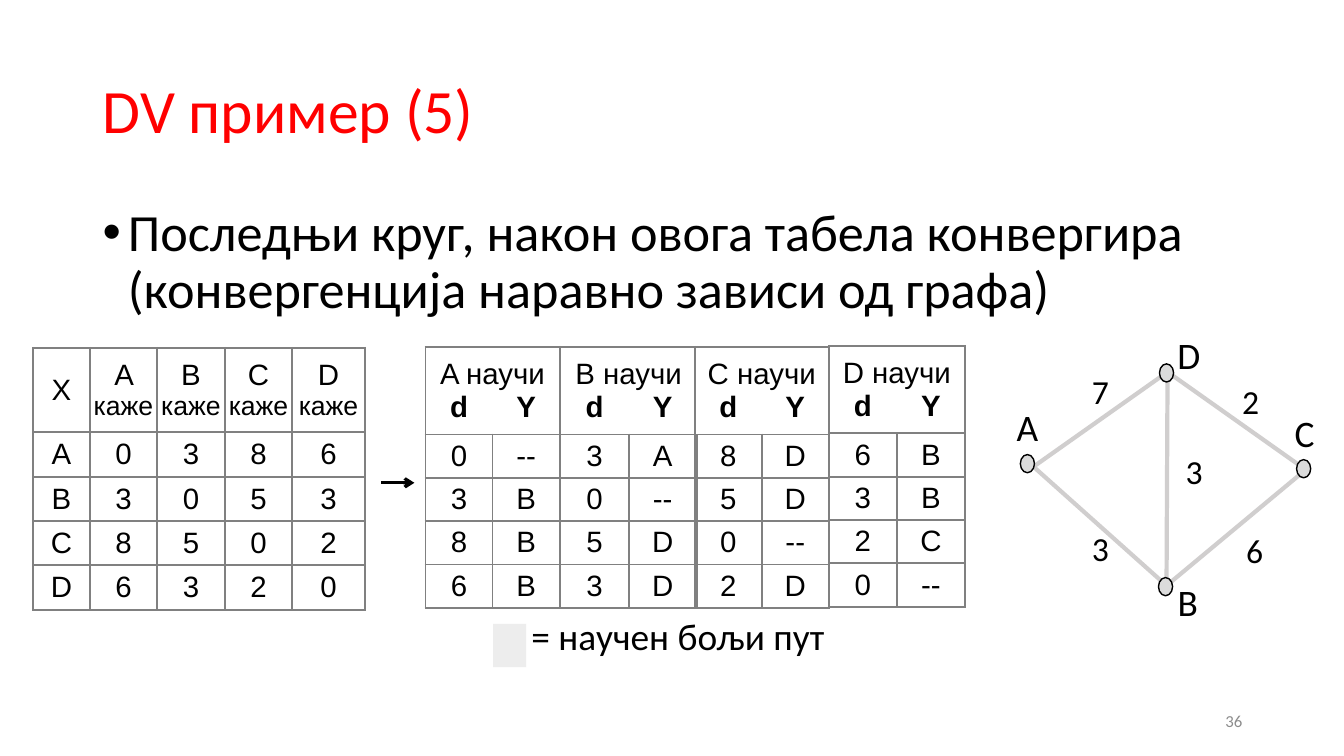
import lxml.etree
import pptx
import pptx.dml.color
import pptx.enum.shapes
import pptx.enum.text
import pptx.oxml.ns
import pptx.util

Inches = pptx.util.Inches
Pt = pptx.util.Pt
qn = pptx.oxml.ns.qn
ALIGN = pptx.enum.text.PP_ALIGN
ANCHOR = pptx.enum.text.MSO_ANCHOR
SHAPE = pptx.enum.shapes.MSO_SHAPE


def color(value):
    return pptx.dml.color.RGBColor.from_string(value)


def add_xml(parent, tag, **attributes):
    return lxml.etree.SubElement(parent, qn(tag), attributes)


class SlideBuilder:
    """Holds the slide and its style, and adds each kind of element."""

    body_font, table_font = "Calibri", "Arial"
    black, white, red, gray = "000000", "FFFFFF", "FF0000", "808080"

    def __init__(self, slide):
        self.slide = slide

    def style(self, font, size, name=None, hue=None, bold=False):
        font.name = name or self.body_font
        font.size = Pt(size)
        font.bold = bold
        font.color.rgb = color(hue or self.black)

    def title(self, text, *box):
        shape = self.slide.shapes.title
        shape.left, shape.top, shape.width, shape.height = map(Inches, box)
        frame = shape.text_frame
        frame.text = text
        frame.vertical_anchor = ANCHOR.MIDDLE
        paragraph = frame.paragraphs[0]
        paragraph.alignment = ALIGN.LEFT
        paragraph.line_spacing = 0.9
        self.style(paragraph.font, 44, hue=self.red)

    def text(self, text, box, size, hue=None, align=ALIGN.LEFT, anchor=ANCHOR.TOP,
             wrap=True, insets=(0.1, 0.05), spacing=None, bullet=False):
        frame = self.slide.shapes.add_textbox(*map(Inches, box)).text_frame
        frame.word_wrap = wrap
        frame.vertical_anchor = anchor
        frame.margin_left, frame.margin_top = map(Inches, insets)
        frame.margin_bottom = frame.margin_top
        frame.text = text
        paragraph = frame.paragraphs[0]
        paragraph.alignment = align
        if bullet:
            properties = paragraph._p.get_or_add_pPr()
            properties.set("marL", str(Inches(0.25)))
            properties.set("indent", str(-Inches(0.25)))
            add_xml(properties, "a:buFont", typeface="Arial")
            add_xml(properties, "a:buChar", char="•")
            paragraph.space_before = Pt(10)
        if spacing:
            paragraph.line_spacing = spacing
        self.style(paragraph.font, size, hue=hue)

    def shape(self, kind, box, fill, line=None):
        shape = self.slide.shapes.add_shape(kind, *map(Inches, box))
        shape.shadow.inherit = False
        shape.fill.solid()
        shape.fill.fore_color.rgb = color(fill)
        if line:
            shape.line.color.rgb = color(line)
            shape.line.width = Pt(1)
        else:
            shape.line.fill.background()

    def line(self, start, end, hue, width, arrow=False):
        connector = self.slide.shapes.add_connector(
            pptx.enum.shapes.MSO_CONNECTOR.STRAIGHT, *map(Inches, start + end))
        connector.line.color.rgb = color(hue)
        connector.line.width = Pt(width)
        if arrow:
            add_xml(connector.line._get_or_add_ln(), "a:tailEnd", type="arrow")
        add_xml(connector._element.spPr, "a:effectLst")

    def table(self, left, top, columns, rows):
        table = self.slide.shapes.add_table(
            len(rows), len(columns), Inches(left), Inches(top),
            Inches(sum(columns)), Inches(sum(rows))).table
        table.first_row = table.horz_banding = False
        for column, width in zip(table.columns, columns):
            column.width = Inches(width)
        for row, height in zip(table.rows, rows):
            row.height = Inches(height)
        return table

    def cell(self, cell, text="", filled=True):
        cell.vertical_anchor = ANCHOR.MIDDLE
        cell.margin_left = cell.margin_right = 0
        cell.margin_top = cell.margin_bottom = Inches(0.01)
        properties = cell._tc.get_or_add_tcPr()
        for side in "LRTB":
            border = add_xml(properties, f"a:ln{side}", w=str(Pt(1.5)))
            add_xml(add_xml(border, "a:solidFill"), "a:srgbClr", val=self.gray)
        if filled:
            cell.fill.solid()
            cell.fill.fore_color.rgb = color(self.white)
        else:
            cell.fill.background()
        cell.text = text
        paragraph = cell.text_frame.paragraphs[0]
        paragraph.alignment = ALIGN.CENTER
        self.style(paragraph.font, 21, self.table_font)

    def announced_table(self, nodes, distances):
        table = self.table(0.33, 3.45, [0.56, 0.67, 0.67, 0.67, 0.72], [0.84] + [0.44] * 4)
        self.cell(table.cell(0, 0), "X")
        for index, node in enumerate(nodes, 1):
            header = table.cell(0, index)
            self.cell(header)
            paragraph = header.text_frame.paragraphs[0]
            for text, size in ((node + " ", 21), ("каже", 19)):
                run = paragraph.add_run()
                run.text = text
                self.style(run.font, size, self.table_font)
            for column, text in enumerate(node + distances[index - 1]):
                self.cell(table.cell(index, column), text)

    def learned_table(self, node, left, top, width, distances, hops):
        table = self.table(left, top, [width / 2] * 2, [0.87] + [0.43] * 4)
        header = table.cell(0, 0)
        self.cell(header, f"{node} научи")
        self.cell(table.cell(0, 1))
        header.merge(table.cell(0, 1))
        # Centred tab stops put d and Y over the two columns
        paragraph = header.text_frame.add_paragraph()
        paragraph.text = "\td\tY"
        paragraph.alignment = ALIGN.LEFT
        stops = add_xml(paragraph._p.get_or_add_pPr(), "a:tabLst")
        for share in (0.25, 0.75):
            add_xml(stops, "a:tab", pos=str(Inches(width * share)), algn="ctr")
        self.style(paragraph.font, 21, self.table_font, bold=True)
        for row, values in enumerate(zip(distances, hops), 1):
            for column, text in enumerate(values):
                self.cell(table.cell(row, column), text, filled=False)


def main():
    presentation = pptx.Presentation()
    presentation.slide_width = Inches(13.33)
    presentation.slide_height = Inches(7.5)
    builder = SlideBuilder(presentation.slides.add_slide(presentation.slide_layouts[5]))

    # Title and statement
    builder.title("DV пример (5)", 0.92, 0.4, 11.5, 1.45)
    builder.text("Последњи круг, након овога табела конвергира "
                 "(конвергенција наравно зависи од графа)",
                 (0.92, 2, 11.5, 4.76), 37.3, spacing=0.9, bullet=True)

    # Announced distances, arrow, learned distances and next hops
    distances = ["0386", "3053", "8502", "6320"]
    builder.announced_table("ABCD", distances)
    builder.line((3.78, 4.79), (4.11, 4.79), builder.black, 2.25, arrow=True)
    learned = [
        ("A", 4.22, 3.44, 1.33, ["--", "B", "B", "B"]),
        ("B", 5.56, 3.44, 1.35, ["A", "--", "D", "D"]),
        ("C", 6.89, 3.44, 1.33, ["D", "D", "--", "D"]),
        ("D", 8.22, 3.43, 1.35, ["B", "B", "C", "--"]),
    ]
    for (node, left, top, width, hops), values in zip(learned, distances):
        builder.learned_table(node, left, top, width, values, hops)

    # Legend
    builder.text("= научен бољи пут", (5, 6.12, 4.06, 0.47), 26.7,
                 insets=(0.27, 0.05), spacing=0.8)
    builder.shape(SHAPE.RECTANGLE, (4.89, 6.19, 0.33, 0.43), "EDEDED")

    # Graph: edges with weights, then nodes with names
    ends = {"A": (10.25, 4.63), "B": (11.57, 5.81), "C": (12.95, 4.66), "D": (11.58, 3.69)}
    edges = [("BC", "6", 12.29, 5.26), ("BD", "3", 11.69, 4.47), ("BA", "3", 10.76, 5.24),
             ("AD", "7", 10.76, 3.68), ("DC", "2", 12.25, 3.78)]
    for (start, end), weight, left, top in edges:
        builder.line(ends[start], ends[end], "D0CECE", 3)
        builder.text(weight, (left, top, 0.3, 0.4), 24, wrap=False, insets=(0.07, 0))
    nodes = [("A", 10.12, 4.51, 9.98, 3.96), ("B", 11.49, 5.73, 11.57, 5.69),
             ("C", 12.86, 4.56, 12.73, 4.02), ("D", 11.5, 3.61, 11.58, 3.24)]
    for name, left, top, name_left, name_top in nodes:
        builder.shape(SHAPE.OVAL, (left, top, 0.14, 0.18), "DBDBDB", builder.black)
        builder.text(name, (name_left, name_top, 0.42, 0.55), 26.7, align=ALIGN.CENTER,
                     anchor=ANCHOR.MIDDLE, wrap=False)

    # Slide number
    builder.text("36", (9.42, 6.95, 3, 0.4), 12, "8C8C8C", ALIGN.RIGHT, ANCHOR.MIDDLE)
    presentation.save("out.pptx")


if __name__ == "__main__":
    main()
